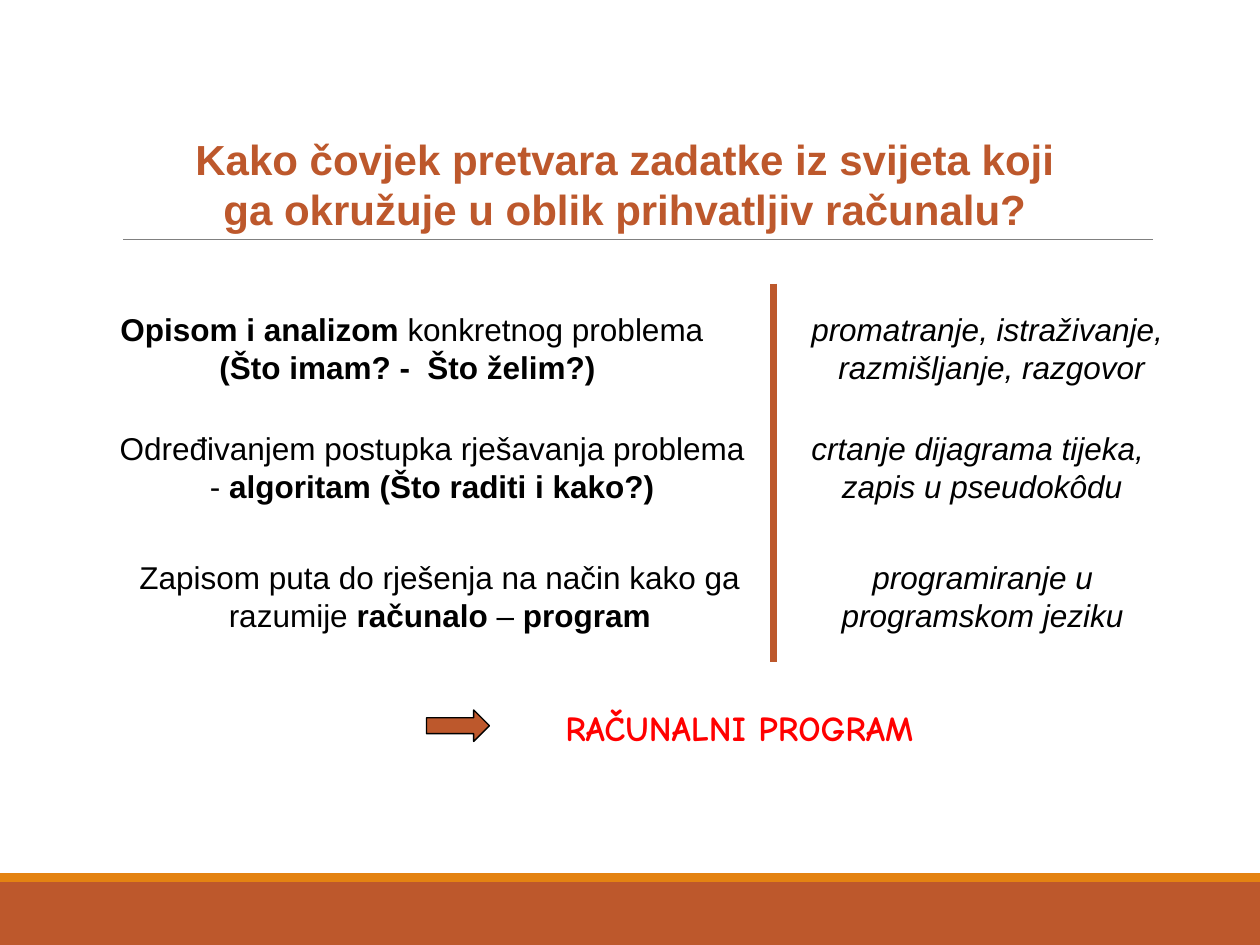
"""Builds the slide on how people turn tasks into a form a computer accepts."""
from dataclasses import dataclass

from lxml.etree import SubElement
from pptx import Presentation
from pptx.dml.color import RGBColor
from pptx.enum.shapes import MSO_CONNECTOR, MSO_SHAPE
from pptx.enum.text import MSO_ANCHOR, MSO_AUTO_SIZE, PP_ALIGN
from pptx.oxml.ns import qn
from pptx.util import Pt


@dataclass(frozen=True)
class Theme:
    rust: RGBColor = RGBColor(0xBD, 0x58, 0x2C)
    orange: RGBColor = RGBColor(0xE4, 0x83, 0x12)
    gray: RGBColor = RGBColor(0x80, 0x80, 0x80)
    black: RGBColor = RGBColor(0, 0, 0)
    red: RGBColor = RGBColor(0xFF, 0, 0)
    body_font: str = "Arial"
    result_font: str = "Comic Neue"
    title_size: int = 24
    result_size: int = 20
    body_size: int = 18


theme = Theme()


def write(box, paragraphs, font, size, color, anchor=MSO_ANCHOR.TOP, fit=MSO_AUTO_SIZE.SHAPE_TO_FIT_TEXT):
    frame = box.text_frame
    frame.word_wrap = True
    frame.auto_size = fit
    frame.vertical_anchor = anchor
    for index, pieces in enumerate(paragraphs):
        paragraph = frame.add_paragraph() if index else frame.paragraphs[0]
        paragraph.alignment = PP_ALIGN.CENTER
        for words, style in pieces:
            run = paragraph.add_run()
            run.text = words
            run.font.name = font
            run.font.size = Pt(size)
            run.font.color.rgb = color
            run.font.bold = style == "bold"
            run.font.italic = style == "italic"


def add_rule(start_x, start_y, end_x, end_y, color, width):
    rule = slide.shapes.add_connector(
        MSO_CONNECTOR.STRAIGHT, Pt(start_x), Pt(start_y), Pt(end_x), Pt(end_y))
    rule.line.color.rgb = color
    rule.line.width = Pt(width)
    SubElement(rule._element.spPr, qn("a:effectLst"))


deck = Presentation()
deck.slide_width, deck.slide_height = Pt(720), Pt(540)
slide = deck.slides.add_slide(deck.slide_layouts[5])

for top, height, color in [(504, 36, theme.rust), (499, 5, theme.orange)]:
    band = slide.shapes.add_shape(MSO_SHAPE.RECTANGLE, Pt(0), Pt(top), Pt(720), Pt(height))
    band.shadow.inherit = False
    band.fill.solid()
    band.fill.fore_color.rgb = color
    band.line.fill.background()

add_rule(70.5, 136.8, 659, 136.8, theme.gray, 0.5)

title = slide.shapes.title
title.left, title.top, title.width, title.height = Pt(87.8), Pt(72.7), Pt(538.6), Pt(64.8)
question = "Kako čovjek pretvara zadatke iz svijeta koji ga okružuje u oblik prihvatljiv računalu?"
write(title, [[(question, "bold")]], theme.body_font, theme.title_size, theme.rust, MSO_ANCHOR.MIDDLE)

steps = [
    (173.5,
     (51.1, 368.6, [[("Opisom i analizom", "bold"), (" konkretnog problema ", ""),
                     ("(Što imam? -  Što želim?) ", "bold")]]),
     (439.2, 254.9, [[("promatranje, istraživanje,  razmišljanje, razgovor", "italic")]])),
    (241.9,
     (56.9, 380.2, [[("Određivanjem postupka rješavanja problema - ", ""),
                     ("algoritam (Što raditi i kako?)", "bold")]]),
     (447.8, 226.8, [[("crtanje dijagrama tijeka, ", "italic")],
                     [("zapis u pseudokôdu", "italic")]])),
    (315.4,
     (67.7, 367.2, [[("Zapisom puta do rješenja na način kako ga razumije ", ""),
                     ("računalo", "bold"), (" – ", ""), ("program", "bold")]]),
     (462.2, 198.7, [[("programiranje u programskom jeziku", "italic")]])),
]
for top, *columns in steps:
    for left, width, paragraphs in columns:
        cell = slide.shapes.add_textbox(Pt(left), Pt(top), Pt(width), Pt(50.4))
        write(cell, paragraphs, theme.body_font, theme.body_size, theme.black)

add_rule(442, 162, 442, 378, theme.rust, 4.5)

arrow = slide.shapes.add_shape(MSO_SHAPE.DOWN_ARROW, Pt(252.7), Pt(396.7), Pt(18), Pt(36))
arrow.rotation = 270
arrow.shadow.inherit = False
arrow.fill.solid()
arrow.fill.fore_color.rgb = theme.rust
arrow.line.color.rgb = theme.black
arrow.line.width = Pt(0.75)

result = slide.shapes.add_textbox(Pt(289.4), Pt(400.3), Pt(266.4), Pt(27.4))
write(result, [[("RAČUNALNI PROGRAM", "bold")]], theme.result_font, theme.result_size, theme.red,
      fit=MSO_AUTO_SIZE.NONE)

deck.save("out.pptx")
